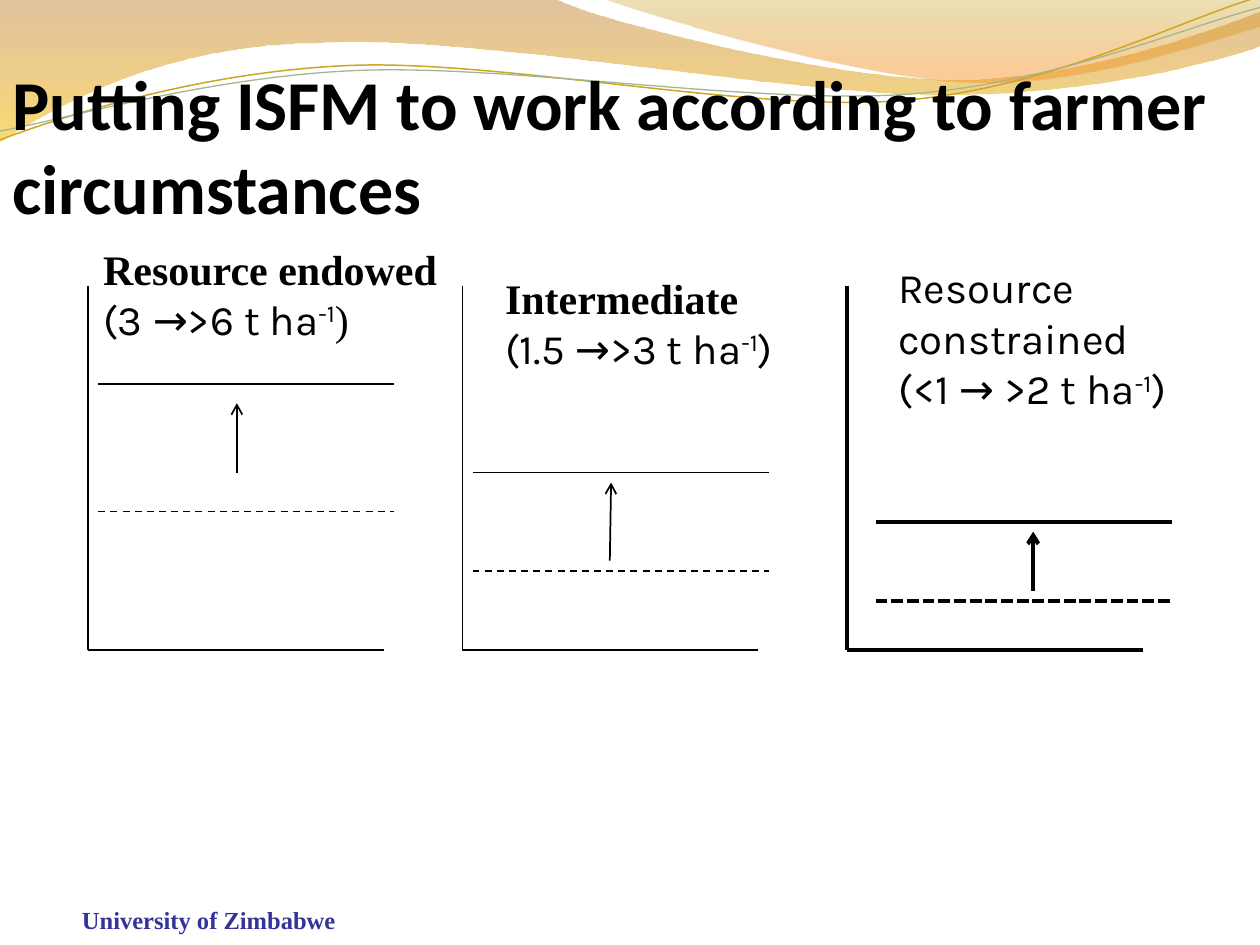
from math import cos, radians, sin

from lxml.etree import SubElement
from pptx import Presentation
from pptx.dml.color import RGBColor
from pptx.enum.dml import MSO_LINE_DASH_STYLE as Dash
from pptx.enum.shapes import MSO_CONNECTOR as Connector
from pptx.enum.text import MSO_AUTO_SIZE as AutoSize
from pptx.oxml.ns import qn
from pptx.util import Inches, Pt

COLORS = {
    "ink": "000000", "footer": "333399", "gold": "CCA624", "sage": "A5B592",
    "brown": "C07A28", "yellow": "F7BF00", "olive": "C09709", "orange": "F59320",
}
SERIF, SANS, TITLE = "Times New Roman", "Karla", "Calibri"
AXIS_TOP, AXIS_BOTTOM, LINE_LENGTH = 2.27, 5.16, 2.35
TILT = -2.7

LEFT_WAVE = [
    [(0, -0.01)], [(4.4, -0.01)],
    [(4.76, 0.17), (6.64, 0.63), (7.58, 0.63)],
    [(8.53, 0.63), (9.58, 0.26), (10, 0.09)],
    [(10.01, 0.36)],
    [(9.83, 0.44), (8.7, 0.76), (7.46, 0.75)],
    [(6.22, 0.75), (3.82, 0.28), (2.57, 0.34)],
    [(1.29, 0.35), (0.46, 0.83), (-0.01, 1.13)],
]
RIGHT_WAVE = [
    [(4.79, -0.01)],
    [(5.09, 0.11), (6.82, 0.62), (7.69, 0.65)],
    [(8.56, 0.69), (9.61, 0.32), (10, 0.21)],
    [(10, 0)],
]
GOLD_STRAND = [
    [(0, 1.11)],
    [(0.48, 0.93), (1.58, 0.57), (2.77, 0.52)],
    [(3.95, 0.47), (5.93, 0.89), (7.13, 0.8)],
    [(8.33, 0.71), (9.38, 0.15), (9.98, -0.02)],
]
SAGE_STRAND = [
    [(0, 1.04)],
    [(0.47, 0.96), (1.64, 0.61), (2.83, 0.56)],
    [(4.03, 0.51), (5.97, 0.83), (7.17, 0.75)],
    [(8.36, 0.67), (9.41, 0.21), (10, 0.06)],
]

BOLD_SERIF = {"name": SERIF, "bold": True}
PLAIN_SANS = {"name": SANS, "bold": False}
PANELS = [
    {"axis": 0.7, "inset": 0.08, "width": 1, "before": 4.06, "after": 3.05,
     "dash": Dash.DASH, "arrow": (1.88, 3.75, 1.88, 3.2),
     "box": (0.72, 1.88, 2.94, 0.91), "heading": ("Resource endowed", BOLD_SERIF),
     "yield": "(3 →>6 t ha", "close": {"name": SERIF, "bold": False}},
    {"axis": 3.67, "inset": 0.08, "width": 1, "before": 4.53, "after": 3.75,
     "dash": Dash.DASH, "arrow": (4.84, 4.45, 4.85, 3.83),
     "box": (3.91, 2.11, 2.42, 0.91), "heading": ("Intermediate", BOLD_SERIF),
     "yield": "(1.5 →>3 t ha", "close": PLAIN_SANS},
    {"axis": 6.72, "inset": 0.23, "width": 2.25, "before": 4.77, "after": 4.14,
     "dash": Dash.SQUARE_DOT, "arrow": (8.2, 4.69, 8.2, 4.22),
     "box": (7.03, 2.03, 2.58, 1.31), "heading": ("Resource constrained", PLAIN_SANS),
     "yield": "(<1 → >2 t ha", "close": PLAIN_SANS},
]


def rgb(name):
    """Return the named palette colour."""
    return RGBColor.from_string(COLORS[name])


def turn(segments, center, degrees):
    """Rotate the points of all segments clockwise about a center."""
    cx, cy = center
    c, s = cos(radians(degrees)), sin(radians(degrees))
    return [[(cx + (x - cx) * c - (y - cy) * s, cy + (x - cx) * s + (y - cy) * c)
             for x, y in segment] for segment in segments]


def add_outline(slide, segments, close):
    """Draw a freeform of lines (one point) and cubic curves (three points)."""
    corners = [tuple(map(Inches, segment[-1])) for segment in segments]
    builder = slide.shapes.build_freeform(*corners[0], scale=1.0)
    builder.add_line_segments(corners[1:], close=close)
    shape = builder.convert_to_shape()
    shape.shadow.inherit = False
    edges = list(shape._element.spPr.iter(qn("a:lnTo")))
    for edge, segment in zip(edges, segments[1:]):
        if len(segment) == 3:
            curve = edge.makeelement(qn("a:cubicBezTo"))
            for x, y in segment:
                SubElement(curve, qn("a:pt"), x=str(Inches(x) - shape.left),
                           y=str(Inches(y) - shape.top))
            edge.getparent().replace(edge, curve)
    return shape


def add_wave(slide, segments, stops):
    """Draw a borderless wave with a translucent vertical gradient."""
    shape = add_outline(slide, segments, True)
    shape.line.fill.background()
    shape.fill.gradient()
    shape.fill.gradient_angle = 270
    for stop, (position, color, alpha) in zip(shape.fill.gradient_stops, stops):
        stop.position = position
        stop.color.rgb = rgb(color)
    colors = shape._element.spPr.iter(qn("a:srgbClr"))
    for element, (position, color, alpha) in zip(colors, stops):
        SubElement(element, qn("a:alpha"), val=str(alpha * 1000))


def add_strand(slide, segments, center, color, width):
    """Draw a thin tilted curve."""
    shape = add_outline(slide, turn(segments, center, -TILT), False)
    shape.rotation = TILT
    shape.fill.background()
    shape.line.color.rgb = rgb(color)
    shape.line.width = Pt(width)


def add_line(slide, ends, width, dash=None, arrow=False):
    """Draw a straight line, optionally dashed or with an arrowhead."""
    line = slide.shapes.add_connector(Connector.STRAIGHT, *map(Inches, ends))
    line.line.color.rgb = rgb("ink")
    line.line.width = Pt(width)
    if dash:
        line.line.dash_style = dash
    if arrow:
        SubElement(line.line._get_or_add_ln(), qn("a:tailEnd"), type="arrow")
    SubElement(line._element.spPr, qn("a:effectLst"))


def add_text(slide, box, paragraphs, size, color="ink", left_margin=0.1, grow=True):
    """Add a text box whose paragraphs are lists of (text, format, baseline)."""
    shape = slide.shapes.add_textbox(*map(Inches, box))
    frame = shape.text_frame
    frame.word_wrap = True
    frame.margin_left = Inches(left_margin)
    frame.auto_size = AutoSize.SHAPE_TO_FIT_TEXT if grow else AutoSize.NONE
    for index, runs in enumerate(paragraphs):
        paragraph = frame.add_paragraph() if index else frame.paragraphs[0]
        for text, style, baseline in runs:
            run = paragraph.add_run()
            run.text = text
            for key, value in {"size": Pt(size), **style}.items():
                setattr(run.font, key, value)
            run.font.color.rgb = rgb(color)
            if baseline:
                run.font._element.set("baseline", str(baseline * 1000))


def add_panel(slide, panel):
    """Draw one farmer group: axes, yield levels, arrow and label."""
    left, width = panel["axis"], panel["width"]
    start = left + panel["inset"]
    end = start + LINE_LENGTH
    add_line(slide, (left, AXIS_TOP, left, AXIS_BOTTOM), width)
    add_line(slide, (left, AXIS_BOTTOM, left + LINE_LENGTH, AXIS_BOTTOM), width)
    add_line(slide, (start, panel["before"], end, panel["before"]), width, panel["dash"])
    add_line(slide, (start, panel["after"], end, panel["after"]), width)
    add_line(slide, panel["arrow"], width, arrow=True)
    yield_runs = [(panel["yield"], PLAIN_SANS, 0), ("-1", PLAIN_SANS, 30),
                  (")", panel["close"], 0)]
    add_text(slide, panel["box"], [[(*panel["heading"], 0)], yield_runs], 24)


def main():
    """Build and save the slide."""
    presentation = Presentation()
    presentation.slide_width, presentation.slide_height = Inches(10), Inches(7.5)
    slide = presentation.slides.add_slide(presentation.slide_layouts[6])
    add_wave(slide, LEFT_WAVE, [(0, "brown", 45), (1, "yellow", 55)])
    add_wave(slide, RIGHT_WAVE, [(0, "olive", 30), (0.8, "orange", 45)])
    add_strand(slide, GOLD_STRAND, (4.99, 0.57), "gold", 0.85)
    add_strand(slide, SAGE_STRAND, (5, 0.59), "sage", 0.75)
    add_text(slide, (0.34, 7.13, 2.52, 0.37),
             [[("University of Zimbabwe", BOLD_SERIF, 0)]], 14, "footer", 0.31, False)
    for panel in PANELS:
        add_panel(slide, panel)
    title = "Putting ISFM to work according to farmer circumstances"
    add_text(slide, (0, 0.43, 10, 1.45), [[(title, {"name": TITLE, "bold": True}, 0)]], 40)
    presentation.save("out.pptx")


if __name__ == "__main__":
    main()
